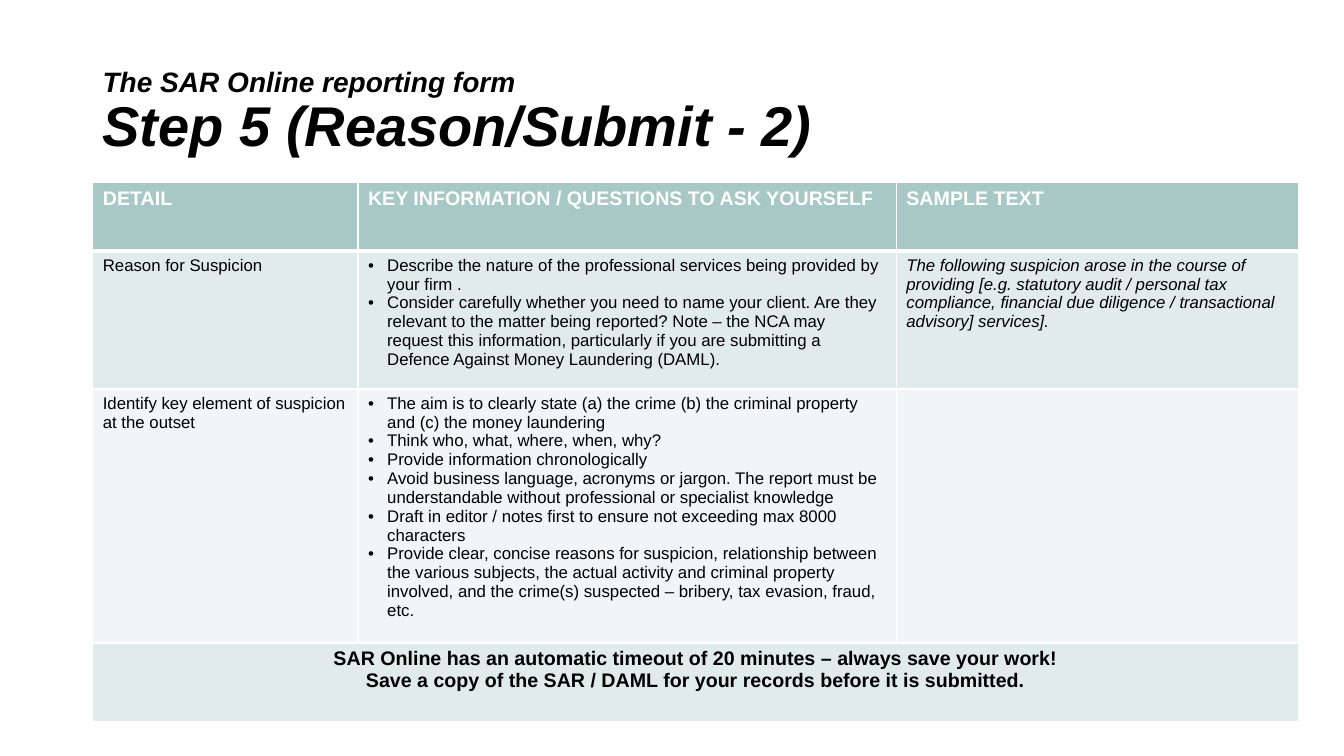
import pptx
import pptx.util
import pptx.dml.color
import pptx.enum.text
import pptx.oxml.ns
from lxml import etree

Inches = pptx.util.Inches
Pt = pptx.util.Pt
RGBColor = pptx.dml.color.RGBColor
qn = pptx.oxml.ns.qn

BLACK = RGBColor(0x00, 0x00, 0x00)
WHITE = RGBColor(0xFF, 0xFF, 0xFF)
TEAL = RGBColor(0xA7, 0xC8, 0xC4)
PALE = RGBColor(0xE1, 0xEB, 0xEA)
MIST = RGBColor(0xF1, 0xF5, 0xF5)


def style(run, size, color=BLACK, bold=False, italic=False):
    font = run.font
    font.name = "Arial"
    font.size = Pt(size)
    font.color.rgb = color
    font.bold = bold
    font.italic = italic


def border(cell, side, width):
    line = etree.SubElement(cell._tc.get_or_add_tcPr(), qn("a:ln" + side), w=str(Pt(width)))
    fill = etree.SubElement(line, qn("a:solidFill"))
    etree.SubElement(fill, qn("a:srgbClr"), val=str(WHITE))


prs = pptx.Presentation()
prs.slide_width = Inches(13.33)
prs.slide_height = Inches(7.5)
slide = prs.slides.add_slide(prs.slide_layouts[6])

# Title
box = slide.shapes.add_textbox(Inches(0.92), Inches(0.4), Inches(11.96), Inches(1.45))
frame = box.text_frame
frame.word_wrap = True
frame.vertical_anchor = pptx.enum.text.MSO_ANCHOR.MIDDLE
title = frame.paragraphs[0]
title.text = "The SAR Online reporting form\vStep 5 (Reason/Submit - 2)"
title.line_spacing = 0.9
for run, size in zip(title.runs, (20, 40)):
    style(run, size, bold=True, italic=True)

# Table content: one list of cells per row
rows = [
    ["DETAIL", "KEY INFORMATION / QUESTIONS TO ASK YOURSELF", "SAMPLE TEXT"],
    [
        "Reason for Suspicion",
        "Describe the nature of the professional services being provided by your firm .\n"
        "Consider carefully whether you need to name your client. Are they relevant to the "
        "matter being reported? Note – the NCA may request this information, particularly if "
        "you are submitting a Defence Against Money Laundering (DAML).",
        "The following suspicion arose in the course of providing [e.g. statutory audit / "
        "personal tax compliance, financial due diligence / transactional advisory] services].",
    ],
    [
        "Identify key element of suspicion at the outset",
        "The aim is to clearly state (a) the crime (b) the criminal property and (c) the money "
        "laundering\n"
        "Think who, what, where, when, why?\n"
        "Provide information chronologically\n"
        "Avoid business language, acronyms or jargon. The report must be understandable "
        "without professional or specialist knowledge\n"
        "Draft in editor / notes first to ensure not exceeding max 8000 characters\n"
        "Provide clear, concise reasons for suspicion, relationship between the various "
        "subjects, the actual activity and criminal property involved, and the crime(s) "
        "suspected – bribery, tax evasion, fraud, etc.",
        "",
    ],
    [
        "SAR Online has an automatic timeout of 20 minutes – always save your work!\n"
        "Save a copy of the SAR / DAML for your records before it is submitted.",
        "",
        "",
    ],
]
fills = [TEAL, PALE, MIST, PALE]
widths = [2.63, 5.34, 3.99]
heights = [0.68, 1.37, 2.52, 0.78]
last = len(rows) - 1

# Table grid
table = slide.shapes.add_table(
    len(rows), len(widths), Inches(0.92), Inches(1.81), Inches(sum(widths)), Inches(sum(heights))
).table
for col, width in zip(table.columns, widths):
    col.width = Inches(width)
for row, height in zip(table.rows, heights):
    row.height = Inches(height)
table.cell(last, 0).merge(table.cell(last, 2))

# Cells
for r, texts in enumerate(rows):
    for c, text in enumerate(texts):
        cell = table.cell(r, c)
        for side in "LRTB":
            thick = (r, side) in ((0, "B"), (1, "T"))
            border(cell, side, 3 if thick else 1)
        cell.fill.solid()
        cell.fill.fore_color.rgb = fills[r]
        if not text:
            continue
        cell.text_frame.text = text
        strong = r in (0, last)
        for para in cell.text_frame.paragraphs:
            style(
                para.runs[0],
                14 if strong else 12,
                WHITE if r == 0 else BLACK,
                bold=strong,
                italic=not strong and c == 2,
            )
            if r == last:
                para.alignment = pptx.enum.text.PP_ALIGN.CENTER
            elif r > 0 and c == 1:
                props = para._p.get_or_add_pPr()
                props.set("marL", str(Inches(0.19)))
                props.set("indent", str(Inches(-0.19)))
                etree.SubElement(props, qn("a:buFont"), typeface="Arial")
                etree.SubElement(props, qn("a:buChar"), char="•")

prs.save("out.pptx")
